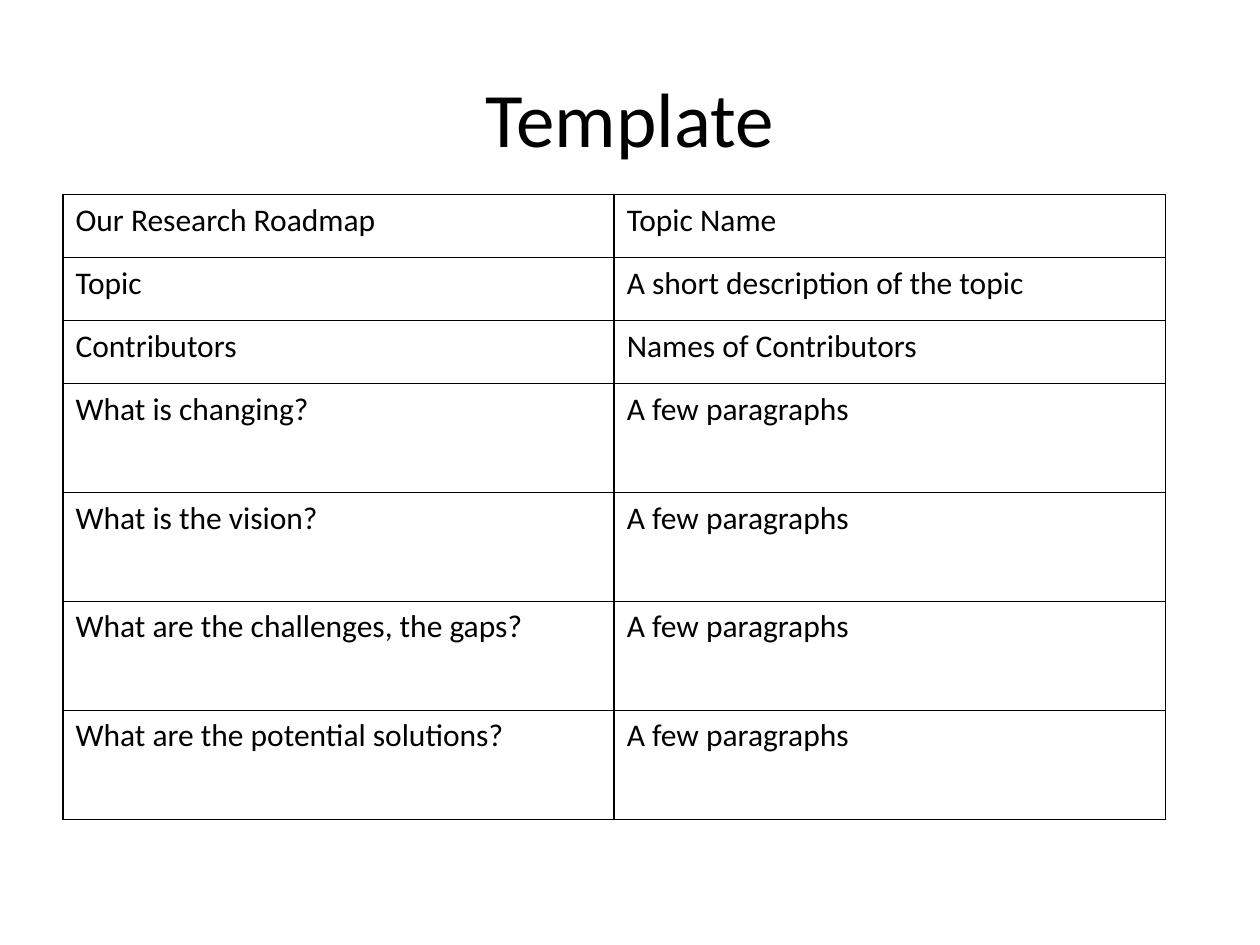
from dataclasses import dataclass

import pptx
import pptx.dml.color
import pptx.enum.text
import pptx.oxml.ns
import pptx.util
from lxml import etree

Pt = pptx.util.Pt


@dataclass(frozen=True)
class Theme:
    font: str = "Calibri"
    ink: str = "000000"
    title_size: int = 44
    body_size: int = 18
    border: int = 1


THEME = Theme()
SHORT, TALL = 36, 62.28
COLUMN = 315

# Label, guidance, row height
ROWS = [
    ("Our Research Roadmap", "Topic Name", SHORT),
    ("Topic", "A short description of the topic", SHORT),
    ("Contributors", "Names of Contributors", SHORT),
    ("What is changing?", "A few paragraphs", TALL),
    ("What is the vision?", "A few paragraphs", TALL),
    ("What are the challenges, the gaps?", "A few paragraphs", TALL),
    ("What are the potential solutions?", "A few paragraphs", TALL),
]


def set_text(tf, text, size):
    tf.text = text
    font = tf.paragraphs[0].font
    font.name = THEME.font
    font.size = Pt(size)
    font.bold = False
    font.color.rgb = pptx.dml.color.RGBColor.from_string(THEME.ink)


def set_borders(cell):
    qn = pptx.oxml.ns.qn
    tc_pr = cell._tc.get_or_add_tcPr()
    for side in ("lnL", "lnR", "lnT", "lnB"):
        ln = etree.SubElement(tc_pr, qn(f"a:{side}"), w=str(Pt(THEME.border)))
        fill = etree.SubElement(ln, qn("a:solidFill"))
        etree.SubElement(fill, qn("a:srgbClr"), val=THEME.ink)


def add_title(s, text):
    sp = s.shapes.title
    sp.left, sp.top, sp.width, sp.height = Pt(36), Pt(21.6), Pt(648), Pt(90)
    tf = sp.text_frame
    tf.vertical_anchor = pptx.enum.text.MSO_ANCHOR.MIDDLE
    set_text(tf, text, THEME.title_size)
    tf.paragraphs[0].alignment = pptx.enum.text.PP_ALIGN.CENTER


def add_roadmap_table(s, rows):
    height = sum(row[2] for row in rows)
    table = s.shapes.add_table(
        len(rows), 2, Pt(36), Pt(111.25), Pt(2 * COLUMN), Pt(height)
    ).table
    table.first_row = False
    table.horz_banding = False
    for column in table.columns:
        column.width = Pt(COLUMN)
    for i, (label, guidance, row_height) in enumerate(rows):
        table.rows[i].height = Pt(row_height)
        for j, text in enumerate((label, guidance)):
            cell = table.cell(i, j)
            set_text(cell.text_frame, text, THEME.body_size)
            set_borders(cell)
            cell.fill.background()


def main():
    prs = pptx.Presentation()
    prs.slide_width, prs.slide_height = Pt(720), Pt(540)
    s = prs.slides.add_slide(prs.slide_layouts[5])

    # Heading
    add_title(s, "Template")

    # Roadmap form
    add_roadmap_table(s, ROWS)

    prs.save("out.pptx")


if __name__ == "__main__":
    main()
